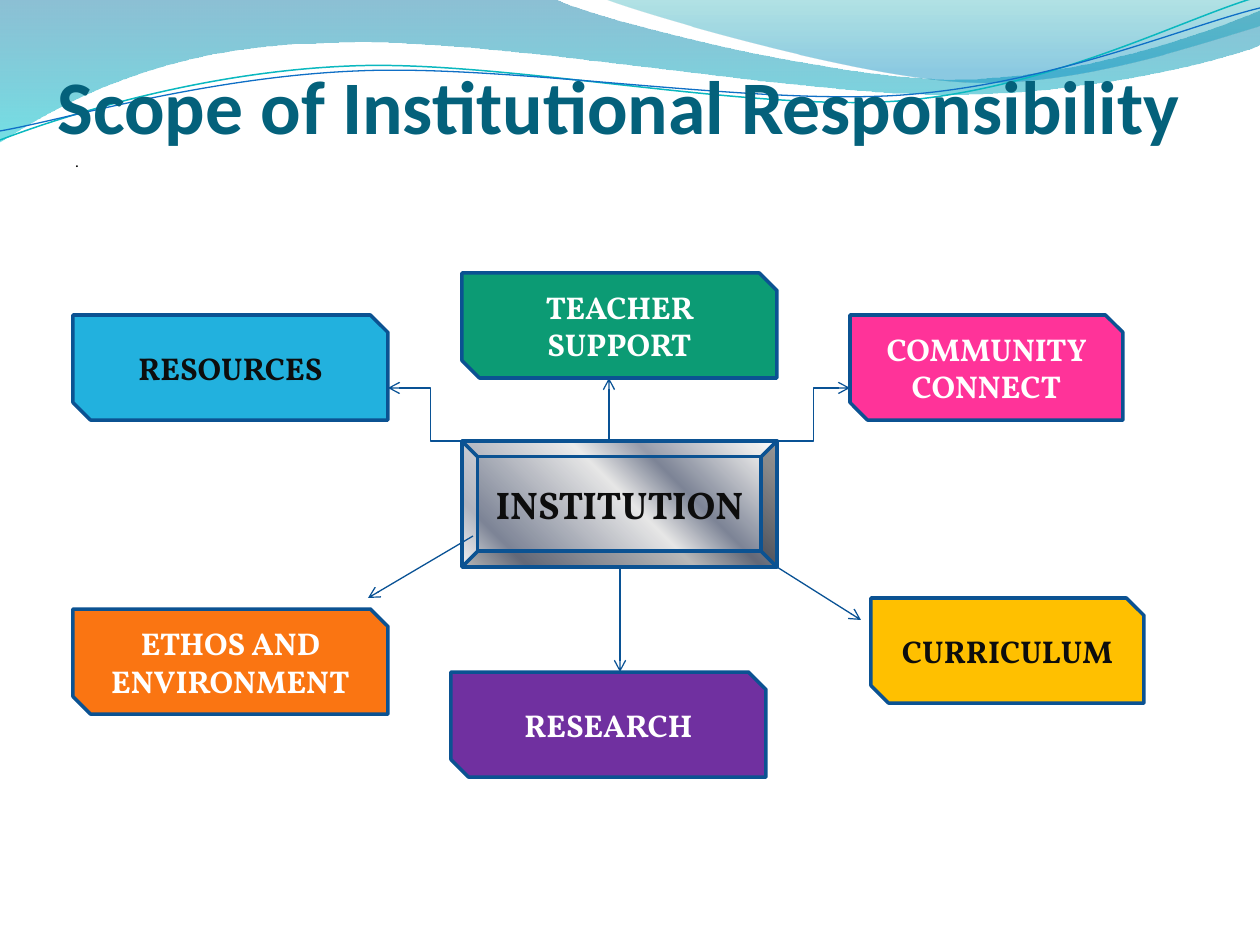
from lxml import etree
from pptx import Presentation
from pptx.dml.color import RGBColor
from pptx.enum.shapes import MSO_CONNECTOR, MSO_SHAPE
from pptx.enum.text import MSO_ANCHOR, PP_ALIGN
from pptx.oxml.ns import qn
from pptx.util import Pt

SCALE = 914400 / 126
STRAIGHT, ELBOW = MSO_CONNECTOR.STRAIGHT, MSO_CONNECTOR.ELBOW
BEVEL, SNIPPED = MSO_SHAPE.BEVEL, MSO_SHAPE.SNIP_2_DIAG_RECTANGLE
CENTER, LEFT = PP_ALIGN.CENTER, PP_ALIGN.LEFT
TOP, MIDDLE, BOTTOM = MSO_ANCHOR.TOP, MSO_ANCHOR.MIDDLE, MSO_ANCHOR.BOTTOM
WHITE, BLACK = "FFFFFF", "0D0D0D"


def px(*lengths):
    return [round(length * SCALE) for length in lengths]


def color(hex_value):
    return RGBColor.from_string(hex_value)


presentation = Presentation()
presentation.slide_width, presentation.slide_height = px(1260, 945)
slide = presentation.slides.add_slide(presentation.slide_layouts[6])
shapes = slide.shapes
gradients = []
texts = []

waves = [
    ((0, 0), [
        (554, -1), (600, 21, 837, 79, 955, 79), (1075, 79, 1207, 33, 1260, 11),
        (1261, 45), (1239, 55, 1096, 96, 940, 94), (784, 94, 481, 35, 324, 43),
        (163, 45, 58, 105, -1, 142), (0, 0),
    ], [(0, "0074A1", 45), (100, "00C6CF", 55)], None),
    ((604, -1), [
        (641, 14, 859, 78, 969, 82), (1079, 87, 1211, 40, 1260, 26),
        (1260, 0), (604, -1),
    ], [(0, "00A1A9", 30), (80, "008BBF", 45)], None),
    ((0, 140), [
        (60, 117, 199, 72, 349, 66), (498, 59, 747, 112, 898, 101),
        (1050, 89, 1182, 19, 1257, -3),
    ], None, ("0AB8BF", 0.85)),
    ((0, 131), [
        (59, 121, 207, 77, 357, 71), (508, 64, 753, 106, 903, 95),
        (1053, 84, 1186, 26, 1260, 8),
    ], None, ("0F6FC6", 0.75)),
]
for start, segments, stops, outline in waves:
    points = [px(*segment[i:i + 2]) for segment in segments for i in range(0, len(segment), 2)]
    builder = shapes.build_freeform(*px(*start))
    builder.add_line_segments(points, close=stops is not None)
    wave = builder.convert_to_shape()
    wave.shadow.inherit = False
    lines = iter(list(wave._element.spPr.iter(qn("a:lnTo"))))
    for segment in segments:
        members = [next(lines) for _ in range(len(segment) // 2)]
        if len(members) == 3:
            curve = etree.Element(qn("a:cubicBezTo"))
            members[0].addprevious(curve)
            for line in members:
                curve.append(line[0])
                line.getparent().remove(line)
    if stops:
        wave.line.fill.background()
        gradients.append((wave, 90, stops))
    else:
        wave.fill.background()
        wave.line.color.rgb = color(outline[0])
        wave.line.width = Pt(outline[1])

title = shapes.add_textbox(*px(52, 63, 1134, 87))
title_frame = title.text_frame
title_frame.margin_left = title_frame.margin_right = title_frame.margin_bottom = 0
texts.append((title, "Scope of Institutional Responsibility",
              "Calibri", 43.2, "04617B", True, CENTER, BOTTOM))
body = shapes.add_textbox(*px(63, 147, 1134, 725))
texts.append((body, ".", "Vollkorn", 8, "000000", False, LEFT, TOP))

institution = shapes.add_shape(BEVEL, *px(462, 441, 315, 126))
gradients.append((institution, 135, [
    (0, "FFFFFF", 100), (7, "E6E6E6", 100), (32, "7D8496", 100),
    (47, "E6E6E6", 100), (85, "7D8496", 100), (100, "E6E6E6", 100),
]))
texts.append((institution, "INSTITUTION", "Vollkorn", 22, BLACK, True, CENTER, MIDDLE))

arrows = [
    (STRAIGHT, 620, 567, 620, 672),
    (STRAIGHT, 777, 567, 861, 620),
    (STRAIGHT, 473, 536, 368, 598),
    (ELBOW, 777, 441, 850, 388),
    (ELBOW, 473, 441, 388, 388),
    (STRAIGHT, 609, 441, 609, 378),
]
for kind, *ends in arrows:
    arrow = shapes.add_connector(kind, *px(*ends))
    arrow.line.color.rgb = color("095295")
    arrow.line.width = Pt(0.75)
    properties = arrow._element.spPr
    etree.SubElement(properties.find(qn("a:ln")), qn("a:tailEnd"), type="arrow")
    etree.SubElement(properties, qn("a:effectLst"))

areas = [
    ("COMMUNITY CONNECT", 850, 315, 273, "FF3399", WHITE),
    ("CURRICULUM", 871, 598, 273, "FFC000", BLACK),
    ("RESEARCH", 451, 672, 315, "7030A0", WHITE),
    ("ETHOS AND ENVIRONMENT", 73, 609, 315, "FA7512", WHITE),
    ("RESOURCES", 73, 315, 315, "22B1DE", BLACK),
    ("TEACHER SUPPORT", 462, 273, 315, "0C9B74", WHITE),
]
boxes = [institution]
for name, left, top, width, fill_color, text_color in areas:
    area = shapes.add_shape(SNIPPED, *px(left, top, width, 105))
    area.fill.solid()
    area.fill.fore_color.rgb = color(fill_color)
    boxes.append(area)
    texts.append((area, name, "Vollkorn", 18, text_color, True, CENTER, MIDDLE))

for box in boxes:
    box.shadow.inherit = False
    box.line.color.rgb = color("0B5292")
    box.line.width = Pt(2)

for shape, angle, stops in gradients:
    shape.fill.gradient()
    shape.fill.gradient_angle = 360 - angle
    stop_list = shape._element.spPr.find(qn("a:gradFill")).find(qn("a:gsLst"))
    for old_stop in list(stop_list):
        stop_list.remove(old_stop)
    for position, stop_color, opacity in stops:
        stop = etree.SubElement(stop_list, qn("a:gs"), pos=str(position * 1000))
        tint = etree.SubElement(stop, qn("a:srgbClr"), val=stop_color)
        if opacity < 100:
            etree.SubElement(tint, qn("a:alpha"), val=str(opacity * 1000))

for shape, text, font_name, size, text_color, bold, alignment, anchor in texts:
    text_frame = shape.text_frame
    text_frame.text = text
    text_frame.word_wrap = True
    text_frame.vertical_anchor = anchor
    paragraph = text_frame.paragraphs[0]
    paragraph.alignment = alignment
    font = paragraph.runs[0].font
    font.name = font_name
    font.size = Pt(size)
    font.bold = bold
    font.color.rgb = color(text_color)

presentation.save("out.pptx")
